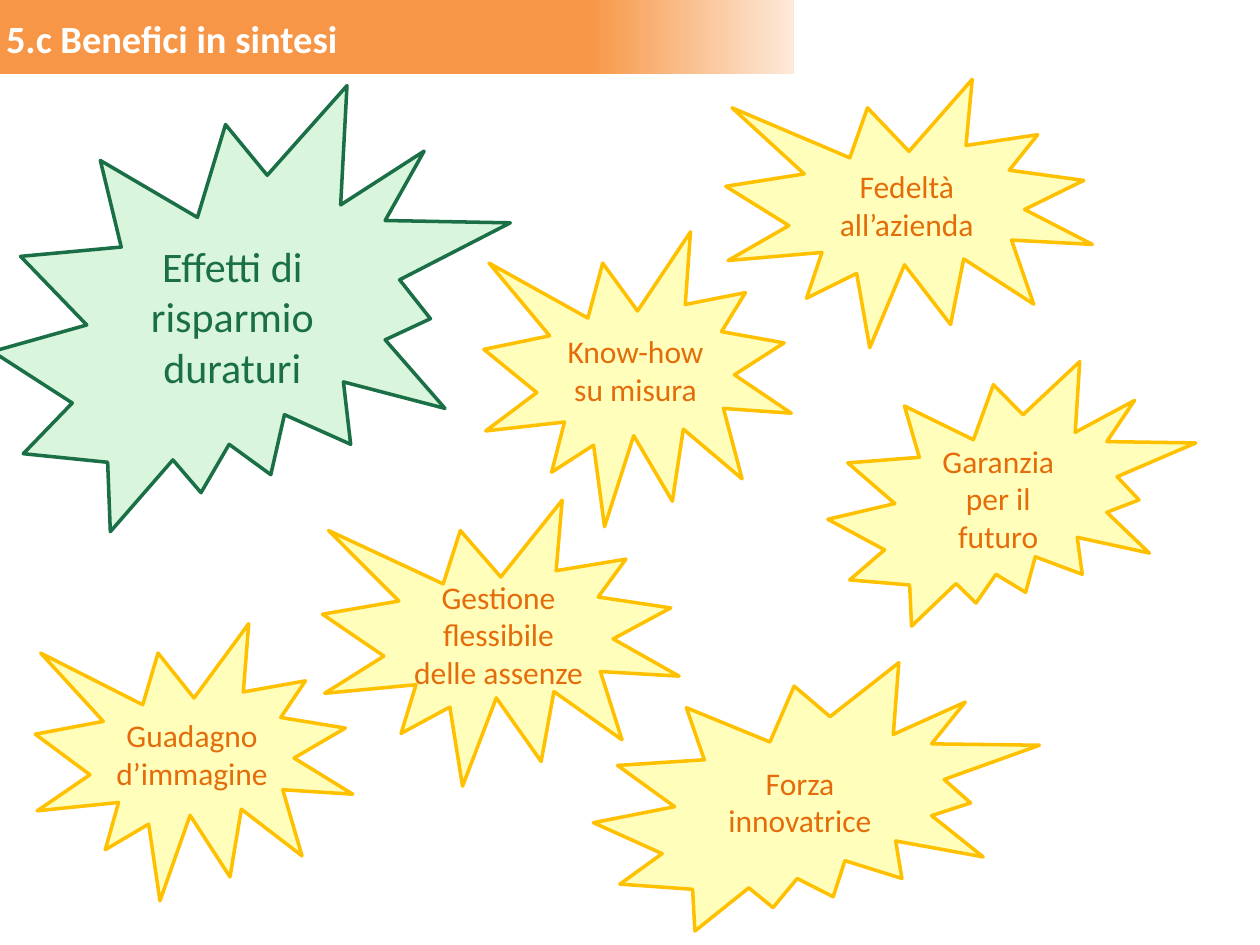
from pptx import Presentation
from pptx.dml.color import RGBColor
from pptx.enum import shapes, text
from pptx.util import Inches, Pt

ORANGE = RGBColor(0xF7, 0x96, 0x46)
PEACH = RGBColor(0xFD, 0xEA, 0xDA)
WHITE = RGBColor(0xFF, 0xFF, 0xFF)
GREEN = RGBColor(0x1B, 0x6F, 0x47)
MINT = RGBColor(0xD9, 0xF5, 0xDC)
YELLOW = RGBColor(0xFF, 0xFE, 0xBA)
GOLD = RGBColor(0xFF, 0xC0, 0x00)
RUST = RGBColor(0xE4, 0x6C, 0x0A)

SPIKY = shapes.MSO_SHAPE.EXPLOSION1
SLANTED = shapes.MSO_SHAPE.EXPLOSION2

BENEFITS = [
    ("Gestione flessibile delle assenze", SPIKY, (2.56, 3.97, 2.83, 2.27)),
    ("Know-how su misura", SPIKY, (3.84, 1.84, 2.44, 2.34)),
    ("Fedeltà all’azienda", SPIKY, (5.76, 0.63, 2.91, 2.13)),
    ("Guadagno d’immagine", SPIKY, (0.28, 4.95, 2.52, 2.2)),
    ("Garanzia per il futuro", SLANTED, (6.57, 2.87, 2.92, 2.1)),
    ("Forza innovatrice", SLANTED, (4.71, 5.26, 3.54, 2.13)),
]


def style_text(frame, wording, size, color, bold=False):
    """Write one paragraph into a wrapping text frame and return it."""
    frame.word_wrap = True
    paragraph = frame.paragraphs[0]
    paragraph.text = wording
    font = paragraph.font
    font.name, font.size, font.bold = "Calibri", Pt(size), bold
    font.color.rgb = color
    return paragraph


def add_header(slide, wording, left, top, width, height):
    """Draw the fading title band with its heading."""
    band = slide.shapes.add_shape(
        shapes.MSO_SHAPE.RECTANGLE,
        Inches(left), Inches(top), Inches(width), Inches(height))
    band.shadow.inherit = False
    band.line.fill.background()
    band.fill.gradient()
    band.fill.gradient_angle = 0
    fade = [(0.74, ORANGE), (1, PEACH)]
    for stop, (position, color) in zip(band.fill.gradient_stops, fade):
        stop.position = position
        stop.color.rgb = color

    heading = slide.shapes.add_textbox(
        Inches(left - 0.05), Inches(top + 0.07),
        Inches(width + 0.33), Inches(height - 0.12))
    heading.text_frame.auto_size = text.MSO_AUTO_SIZE.SHAPE_TO_FIT_TEXT
    style_text(heading.text_frame, wording, 22, WHITE, bold=True)


def add_burst(slide, wording, outline, box, fill=YELLOW, edge=GOLD,
              ink=RUST, size=18):
    """Draw one starburst with a centred benefit inside the given box."""
    burst = slide.shapes.add_shape(outline, *map(Inches, box))
    burst.shadow.inherit = False
    burst.fill.solid()
    burst.fill.fore_color.rgb = fill
    burst.line.color.rgb = edge
    burst.line.width = Pt(2)
    burst.text_frame.vertical_anchor = text.MSO_ANCHOR.MIDDLE
    benefit = style_text(burst.text_frame, wording, size, ink)
    benefit.alignment = text.PP_ALIGN.CENTER


def main():
    """Build the benefits slide and save it."""
    deck = Presentation()
    deck.slide_width, deck.slide_height = Inches(10), Inches(7.5)
    slide = deck.slides.add_slide(deck.slide_layouts[6])
    add_header(slide, "5.c Benefici in sintesi", 0, 0, 6.3, 0.59)
    add_burst(slide, "Effetti di risparmio duraturi", SLANTED,
              (-0.06, 0.68, 4.11, 3.54), MINT, GREEN, GREEN, 24)
    for wording, outline, box in BENEFITS:
        add_burst(slide, wording, outline, box)
    deck.save("out.pptx")


if __name__ == "__main__":
    main()
